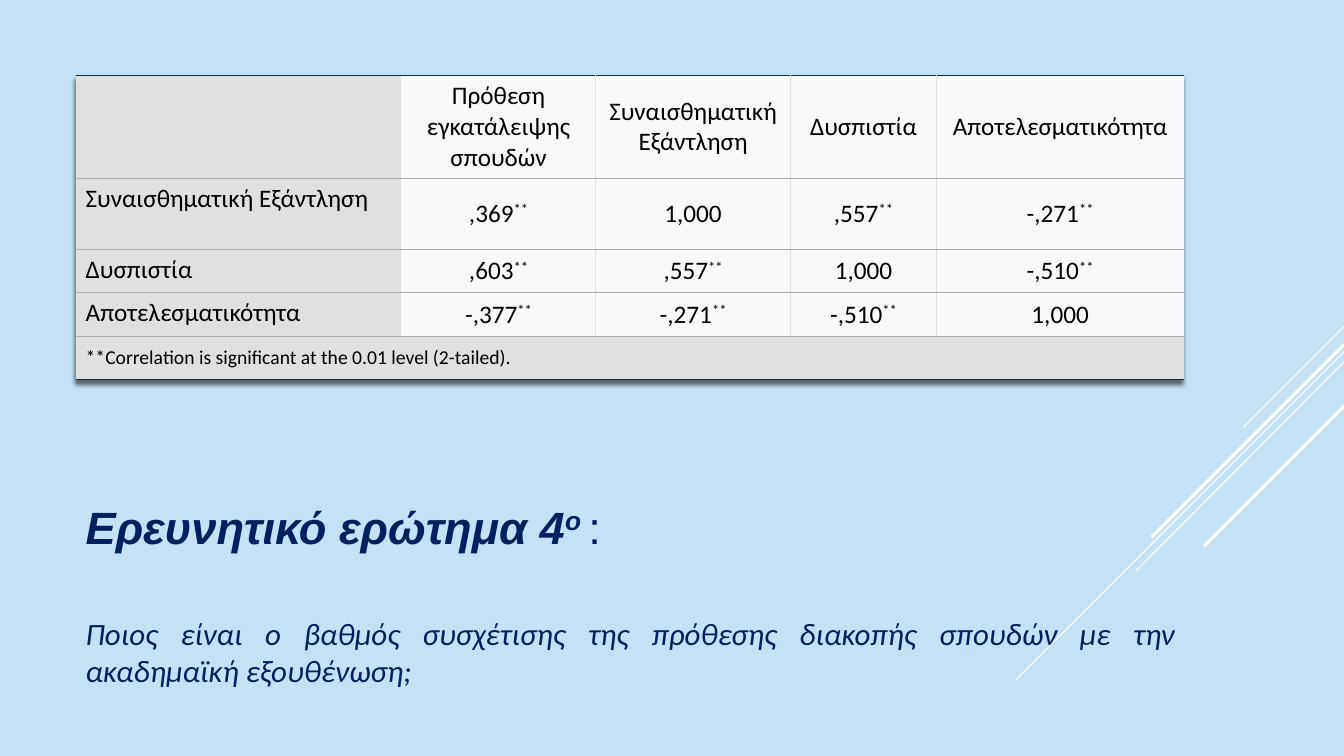
"""Builds the slide with the correlation table and the fourth research question."""
from typing import NamedTuple, Optional

from lxml.etree import SubElement
from pptx import Presentation
from pptx.dml.color import RGBColor
from pptx.enum.shapes import MSO_CONNECTOR
from pptx.enum.text import MSO_ANCHOR, MSO_AUTO_SIZE, PP_ALIGN
from pptx.oxml import parse_xml
from pptx.oxml.ns import nsdecls, qn
from pptx.util import Inches, Pt

COLORS = {
    "background": "C3E2F7",
    "ray": "FFFFFF",
    "ink": "000000",
    "navy": "002060",
    "label": "E0E0E0",
    "value": "F9F9FB",
    "frame": "152935",
    "row_rule": "AEAEAE",
    "column_rule": "E0E0E0",
}
COLUMN_WIDTHS = [3.23, 1.93, 1.93, 1.45, 2.45]
ROW_HEIGHTS = [0.99, 0.71, 0.43, 0.43, 0.43]
ROWS = [
    ["", "Πρόθεση εγκατάλειψης σπουδών", "Συναισθηματική Εξάντληση", "Δυσπιστία", "Αποτελεσματικότητα"],
    ["Συναισθηματική Εξάντληση", ",369**", "1,000", ",557**", "-,271**"],
    ["Δυσπιστία", ",603**", ",557**", "1,000", "-,510**"],
    ["Αποτελεσματικότητα", "-,377**", "-,271**", "-,510**", "1,000"],
    ["**Correlation is significant at the 0.01 level (2-tailed).", "", "", "", ""],
]
LAST_ROW = len(ROWS) - 1
LAST_COLUMN = len(COLUMN_WIDTHS) - 1


class Ray(NamedTuple):
    """A decorative line running from the right edge of the slide."""

    start_y: float
    end_x: float
    end_y: float
    width: float


RAYS = [
    Ray(3.24, 12.33, 4.24, 0.75),
    Ray(3.49, 10.07, 6.75, 0.75),
    Ray(3.59, 11.26, 5.67, 0.75),
    Ray(3.42, 11.42, 5.33, 2.25),
    Ray(4.03, 11.94, 5.42, 2.25),
]


def color(name: str) -> RGBColor:
    """Return a named colour."""
    return RGBColor.from_string(COLORS[name])


def add_ray(page, ray: Ray) -> None:
    """Draw one decorative line."""
    line = page.shapes.add_connector(
        MSO_CONNECTOR.STRAIGHT, Inches(13.33), Inches(ray.start_y), Inches(ray.end_x), Inches(ray.end_y)
    )
    line.line.color.rgb = color("ray")
    line.line.width = Pt(ray.width)
    SubElement(line._element.spPr, qn("a:effectLst"))


def add_span(para, text: str, superscript: bool = False):
    """Append a run, raised when asked."""
    span = para.add_run()
    span.text = text
    if superscript:
        span._r.get_or_add_rPr().set("baseline", "30000")
    return span


def border(side: str, name: Optional[str]):
    """Return the XML of one cell border."""
    paint = f'<a:solidFill><a:srgbClr val="{COLORS[name]}"/></a:solidFill>' if name else "<a:noFill/>"
    return parse_xml(f'<a:ln{side} {nsdecls("a")} w="9525">{paint}</a:ln{side}>')


def set_borders(cell, row: int, column: int) -> None:
    """Rule the cell according to its place in the table."""
    inner = row < LAST_ROW
    names = {
        "L": "column_rule" if inner and column > 1 else None,
        "R": "column_rule" if inner and 0 < column < LAST_COLUMN else None,
        "T": "frame" if row == 0 else "row_rule",
        "B": "frame" if row == LAST_ROW else "row_rule",
    }
    properties = cell._tc.get_or_add_tcPr()
    for index, (side, name) in enumerate(names.items()):
        properties.insert(index, border(side, name))


def fill_cell(cell, row: int, column: int) -> None:
    """Write and format one cell."""
    is_label = column == 0 or row == LAST_ROW
    cell.fill.solid()
    cell.fill.fore_color.rgb = color("label" if is_label else "value")
    set_borders(cell, row, column)
    top_label = column == 0 and 0 < row < LAST_ROW
    cell.vertical_anchor = MSO_ANCHOR.TOP if top_label else MSO_ANCHOR.MIDDLE
    para = cell.text_frame.paragraphs[0]
    para.alignment = PP_ALIGN.JUSTIFY if is_label else PP_ALIGN.CENTER
    para.font.name = "Calibri"
    para.font.size = Pt(14 if row == LAST_ROW else 18)
    para.font.bold = False
    para.font.color.rgb = color("ink")
    text = ROWS[row][column]
    if text:
        add_span(para, text.removesuffix("**"))
    if text.endswith("**"):
        add_span(para, "**", superscript=True)


def add_correlations(page) -> None:
    """Add the correlation table with its soft shadow."""
    frame = page.shapes.add_table(
        len(ROWS), len(COLUMN_WIDTHS), Inches(0.75), Inches(0.75), Inches(11), Inches(3.01)
    )
    table = frame.table
    table.first_row = False
    table.horz_banding = False
    table._tbl.tblPr.insert(0, parse_xml(
        f'<a:effectLst {nsdecls("a")}><a:outerShdw blurRad="38100" dist="38100" dir="5400000">'
        '<a:srgbClr val="000000"><a:alpha val="55000"/></a:srgbClr></a:outerShdw></a:effectLst>'
    ))
    for column, width in zip(table.columns, COLUMN_WIDTHS):
        column.width = Inches(width)
    for row, height in zip(table.rows, ROW_HEIGHTS):
        row.height = Inches(height)
    for row in range(len(ROWS)):
        for column in range(len(COLUMN_WIDTHS)):
            fill_cell(table.cell(row, column), row, column)
    table.cell(LAST_ROW, 0).merge(table.cell(LAST_ROW, LAST_COLUMN))


def format_para(para, font: str, size: float, space_before: float) -> None:
    """Set a justified navy italic paragraph without a bullet."""
    para.alignment = PP_ALIGN.JUSTIFY
    para.space_before = Pt(space_before)
    para.space_after = Pt(0)
    para.font.name = font
    para.font.size = Pt(size)
    para.font.italic = True
    para.font.color.rgb = color("navy")
    properties = para._p.get_or_add_pPr()
    properties.set("marL", "0")
    properties.set("indent", "0")
    properties.insert_element_before(parse_xml(f'<a:buNone {nsdecls("a")}/>'), "a:tabLst", "a:defRPr", "a:extLst")


def write_question(box) -> None:
    """Place the body placeholder and write the research question."""
    box.left, box.top, box.width, box.height = Inches(0.75), Inches(4.5), Inches(11), Inches(2.41)
    text_frame = box.text_frame
    text_frame.word_wrap = True
    text_frame.auto_size = MSO_AUTO_SIZE.NONE
    text_frame.vertical_anchor = MSO_ANCHOR.TOP
    text_frame.margin_top = Inches(0.45)
    heading = text_frame.paragraphs[0]
    format_para(heading, "Arial", 32.3, 0)
    add_span(heading, "Ερευνητικό ερώτημα 4").font.bold = True
    add_span(heading, "ο ", superscript=True).font.bold = True
    add_span(heading, ":").font.italic = False
    question = text_frame.add_paragraph()
    format_para(question, "Calibri", 22.1, 44)
    add_span(question, "Ποιος είναι ο βαθμός συσχέτισης της πρόθεσης διακοπής σπουδών με την ακαδημαϊκή εξουθένωση;")


def main() -> None:
    """Build and save the deck."""
    deck = Presentation()
    deck.slide_width, deck.slide_height = Inches(13.33), Inches(7.5)
    page = deck.slides.add_slide(deck.slide_layouts[1])
    page.background.fill.solid()
    page.background.fill.fore_color.rgb = color("background")
    title, body = page.placeholders
    title._element.getparent().remove(title._element)
    for ray in RAYS:
        add_ray(page, ray)
    write_question(body)
    page.shapes._spTree.append(body._element)
    add_correlations(page)
    deck.save("out.pptx")


if __name__ == "__main__":
    main()
